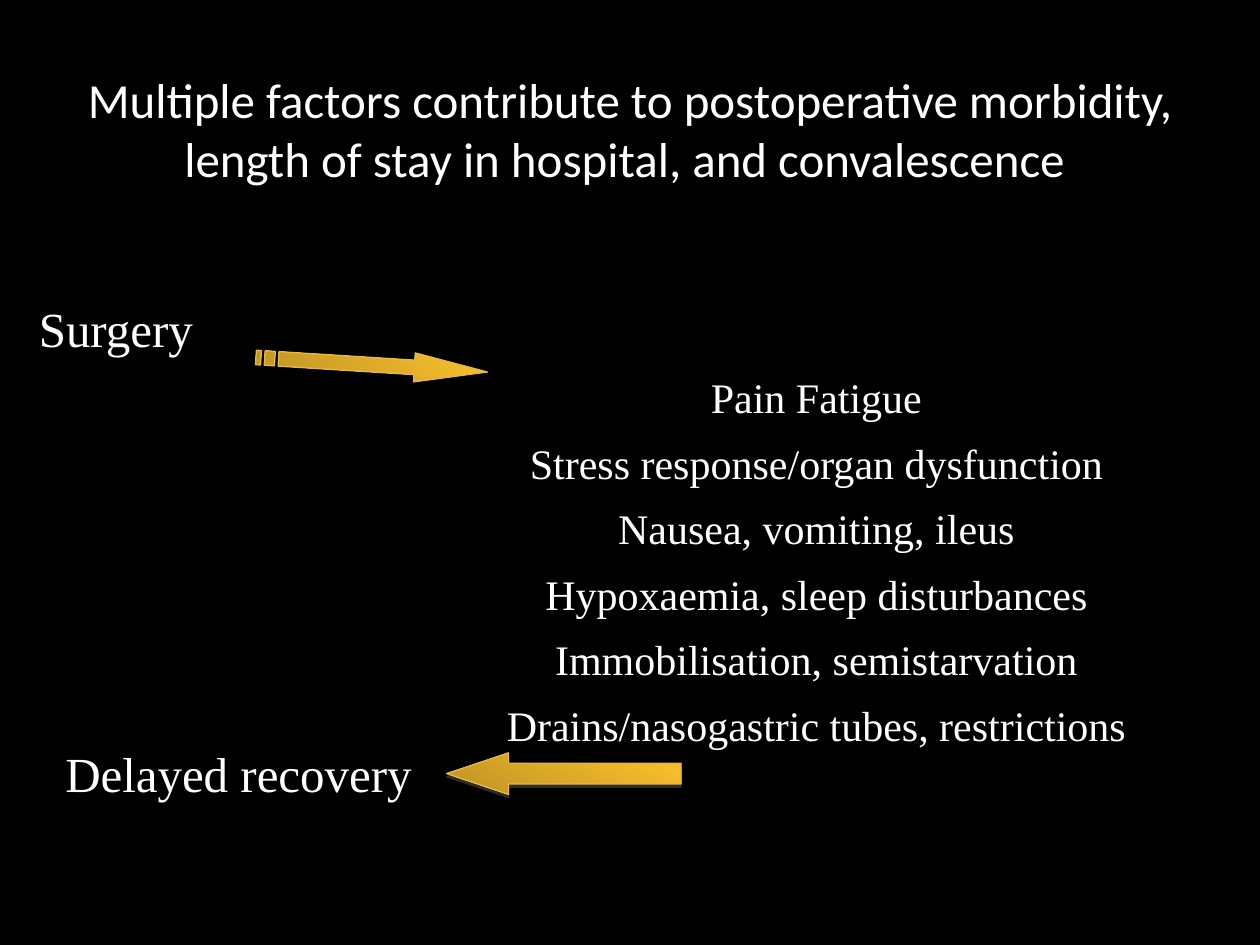
from lxml import etree
from pptx import Presentation
from pptx.dml.color import RGBColor
from pptx.enum import text
from pptx.oxml import ns
from pptx.util import Inches, Pt

COLORS = {
    "background": "000000",
    "text": "FFFFFF",
    "gold": "FDC32D",
    "bronze": "BE9323",
    "outline": "E7B944",
    "dark_shadow": "000000",
    "gray_shadow": "808080",
}
SERIF = "Times New Roman"
FACTORS = [
    "Pain Fatigue",
    "Stress response/organ dysfunction",
    "Nausea, vomiting, ileus",
    "Hypoxaemia, sleep disturbances",
    "Immobilisation, semistarvation",
    "Drains/nasogastric tubes, restrictions",
]


def color(name):
    return RGBColor.from_string(COLORS[name])


def add_text(page, box, lines, size, font, align, spacing=None, middle=False):
    frame = page.shapes.add_textbox(*map(Inches, box)).text_frame
    frame.word_wrap = True
    frame.vertical_anchor = text.MSO_ANCHOR.MIDDLE if middle else text.MSO_ANCHOR.TOP
    frame.text = "\n".join(lines)
    for para in frame.paragraphs:
        para.alignment = align
        para.line_spacing = spacing
        for span in para.runs:
            span.font.size = Pt(size)
            span.font.name = font
            span.font.color.rgb = color("text")


def add_shadow(shape, name):
    properties = shape.fill._xPr
    effects = etree.SubElement(properties, ns.qn("a:effectLst"))
    shadow = etree.SubElement(
        effects, ns.qn("a:outerShdw"),
        blurRad="0", dist=str(Pt(1.8)), dir="5400000", rotWithShape="0")
    tint = etree.SubElement(shadow, ns.qn("a:srgbClr"), val=COLORS[name])
    etree.SubElement(tint, ns.qn("a:alpha"), val="35000")


def add_arrow(page, left, top, contours, rotation, angle, shadow):
    outlines = [[(Inches(x), Inches(y)) for x, y in points] for points in contours]
    builder = page.shapes.build_freeform(*outlines[0][0])
    for index, points in enumerate(outlines):
        if index:
            builder.move_to(*points[0])
        builder.add_line_segments(points[1:], close=True)
    arrow = builder.convert_to_shape(Inches(left), Inches(top))
    arrow.rotation = rotation
    arrow.fill.gradient()
    arrow.fill.gradient_angle = angle
    for stop, name, position in zip(arrow.fill.gradient_stops, ("gold", "bronze"), (0, 1)):
        stop.color.rgb = color(name)
        stop.position = position
    arrow.line.color.rgb = color("outline")
    arrow.line.width = Pt(0.75)
    add_shadow(arrow, shadow)


def add_striped_arrow(page, box):
    left, top, width, height = box
    upper, lower, neck = height / 4, height * 3 / 4, width - 0.58
    stripes = [
        [(start, upper), (end, upper), (end, lower), (start, lower)]
        for start, end in ((0, 0.04), (0.07, 0.15))
    ]
    body = [(0.18, upper), (neck, upper), (neck, 0), (width, height / 2),
            (neck, height), (neck, lower), (0.18, lower)]
    add_arrow(page, left, top, stripes + [body], 3.6, 229, "dark_shadow")


def add_return_arrow(page, box):
    left, top, width, height = box
    near, far, neck = width / 4, width * 3 / 4, height - 0.49
    body = [(near, 0), (near, neck), (0, neck), (width / 2, height),
            (width, neck), (far, neck), (far, 0)]
    add_arrow(page, left, top, [body], 90, 332, "gray_shadow")


def add_title(page, box):
    title = ("Μultiple factors contribute to postoperative morbidity, "
             "length of stay in hospital, and convalescence ")
    add_text(page, box, [title], 28, "Calibri", text.PP_ALIGN.CENTER)


def add_factors(page, box):
    add_text(page, box, FACTORS, 24, SERIF, text.PP_ALIGN.CENTER, 1.3, True)


def add_stage(page, box, label):
    add_text(page, box, [label], 28, SERIF, text.PP_ALIGN.LEFT, 1.3)


def main():
    deck = Presentation()
    deck.slide_width, deck.slide_height = Inches(10), Inches(7.5)
    page = deck.slides.add_slide(deck.slide_layouts[6])
    page.background.fill.solid()
    page.background.fill.fore_color.rgb = color("background")
    add_title(page, (0.5, 0.5, 9, 1.25))
    add_factors(page, (3.73, 2.47, 5.5, 3.84))
    add_striped_arrow(page, (2.03, 2.78, 1.84, 0.23))
    add_return_arrow(page, (4.31, 5.21, 0.33, 1.86))
    add_stage(page, (0.21, 2.18, 1.91, 0.69), "Surgery")
    add_stage(page, (0.42, 5.71, 3.13, 0.69), "Delayed recovery")
    deck.save("out.pptx")


if __name__ == "__main__":
    main()
